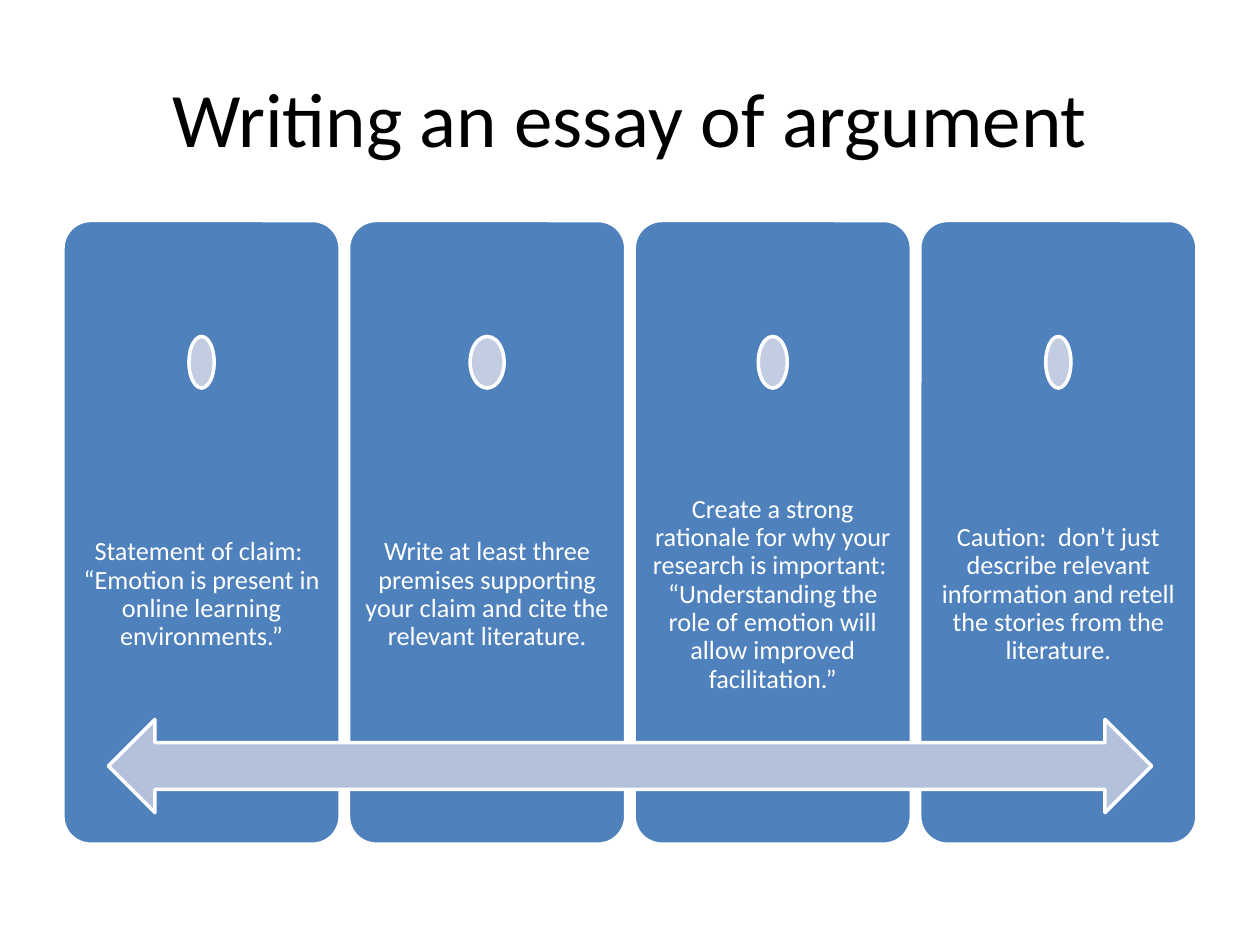
from pptx import Presentation
from pptx.dml.color import RGBColor
from pptx.enum.shapes import MSO_SHAPE as Preset
from pptx.enum.text import MSO_ANCHOR as Anchor, PP_ALIGN as Align
from pptx.util import Inches, Pt

STEPS = [
    ("Statement of claim:  “Emotion is present in online learning environments.”", 0.2),
    ("Write at least three premises supporting your claim and cite the "
     "relevant literature.", 0.27),
    ("Create a strong rationale for why your research is important:  "
     "“Understanding the role of emotion will allow improved facilitation.”", 0.23),
    ("Caution:  don’t just describe relevant information and retell the stories "
     "from the literature.", 0.2),
]
MARGIN, CONTENT_WIDTH = 0.5, 9
PANEL_TOP, PANEL_WIDTH, PANEL_HEIGHT = 1.75, 2.2, 4.95
PITCH = (CONTENT_WIDTH - PANEL_WIDTH) / (len(STEPS) - 1)


def color(hex_value):
    return RGBColor.from_string(hex_value)


def apply_format(target, values):
    for name, value in values.items():
        setattr(target, name, value)


class SlideBuilder:
    font = "Calibri"
    white, black = "FFFFFF", "000000"
    panel_fill, marker_fill, arrow_fill = "4F81BD", "C2CDE1", "B3C1DB"
    outline = Pt(2)

    def __init__(self, slide):
        self.slide = slide

    def shape(self, preset, left, top, width, height, fill):
        shape = self.slide.shapes.add_shape(
            preset, Inches(left), Inches(top), Inches(width), Inches(height))
        shape.shadow.inherit = False
        shape.fill.solid()
        shape.fill.fore_color.rgb = color(fill)
        shape.line.color.rgb = color(self.white)
        shape.line.width = self.outline
        return shape

    def text(self, content, left, top, width, height, size, ink, inset=0.1, spacing=1.0):
        box = self.slide.shapes.add_textbox(
            Inches(left), Inches(top), Inches(width), Inches(height))
        frame = box.text_frame
        sides = ("left", "right", "top", "bottom")
        apply_format(frame, {f"margin_{side}": Inches(inset) for side in sides})
        apply_format(frame, {"word_wrap": True, "vertical_anchor": Anchor.MIDDLE})
        paragraph = frame.paragraphs[0]
        apply_format(paragraph, {"alignment": Align.CENTER, "line_spacing": spacing})
        run = paragraph.add_run()
        run.text = content
        apply_format(run.font, {"name": self.font, "size": Pt(size)})
        run.font.color.rgb = color(ink)

    def step(self, left, content, marker_width):
        """Draw one panel with its oval marker and its text."""
        panel = self.shape(Preset.ROUNDED_RECTANGLE, left, PANEL_TOP,
                           PANEL_WIDTH, PANEL_HEIGHT, self.panel_fill)
        panel.adjustments[0] = 0.1
        self.text(content, left, 3.73, PANEL_WIDTH, 1.98, 15, self.white,
                  inset=0.12, spacing=0.9)
        marker_left = left + (PANEL_WIDTH - marker_width) / 2
        self.shape(Preset.OVAL, marker_left, 2.67, marker_width, 0.41, self.marker_fill)


def main():
    deck = Presentation()
    deck.slide_width, deck.slide_height = Inches(10), Inches(7.5)
    builder = SlideBuilder(deck.slides.add_slide(deck.slide_layouts[6]))

    builder.text("Writing an essay of argument", MARGIN, 0.3, CONTENT_WIDTH, 1.25,
                 44, builder.black)
    for index, (content, marker_width) in enumerate(STEPS):
        builder.step(MARGIN + index * PITCH, content, marker_width)
    builder.shape(Preset.LEFT_RIGHT_ARROW, 0.86, 5.71, 8.28, 0.74, builder.arrow_fill)

    deck.save("out.pptx")


if __name__ == "__main__":
    main()
